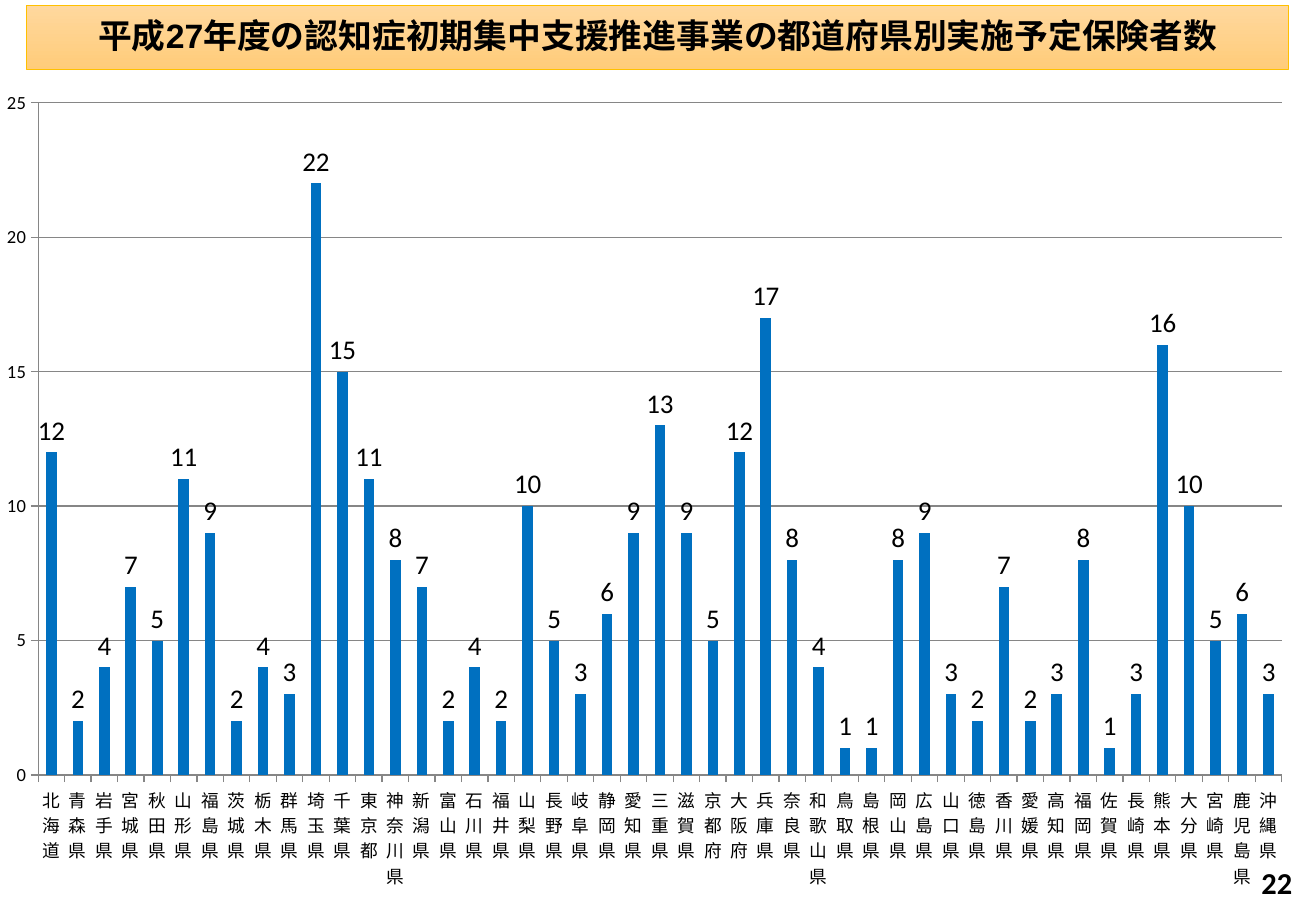
from lxml import etree
from pptx import Presentation
from pptx.chart.data import CategoryChartData
from pptx.dml.color import RGBColor
from pptx.enum.chart import XL_CHART_TYPE as ChartType, XL_LABEL_POSITION as LabelPos, XL_TICK_MARK as Tick
from pptx.enum.shapes import MSO_SHAPE as Shape
from pptx.enum.text import MSO_ANCHOR as Anchor, PP_ALIGN as Align
from pptx.oxml.ns import qn
from pptx.util import Pt

BLACK = RGBColor(0x00, 0x00, 0x00)
BLUE = RGBColor(0x00, 0x70, 0xC0)
GREY = RGBColor(0x86, 0x86, 0x86)
ORANGE_LIGHT = RGBColor(0xFF, 0xD8, 0x9E)
ORANGE_DEEP = RGBColor(0xFF, 0xCC, 0x7A)
GOLD = RGBColor(0xFF, 0xC0, 0x00)

INSURERS = {
    "北海道": 12, "青森県": 2, "岩手県": 4, "宮城県": 7, "秋田県": 5, "山形県": 11,
    "福島県": 9, "茨城県": 2, "栃木県": 4, "群馬県": 3, "埼玉県": 22, "千葉県": 15,
    "東京都": 11, "神奈川県": 8, "新潟県": 7, "富山県": 2, "石川県": 4, "福井県": 2,
    "山梨県": 10, "長野県": 5, "岐阜県": 3, "静岡県": 6, "愛知県": 9, "三重県": 13,
    "滋賀県": 9, "京都府": 5, "大阪府": 12, "兵庫県": 17, "奈良県": 8, "和歌山県": 4,
    "鳥取県": 1, "島根県": 1, "岡山県": 8, "広島県": 9, "山口県": 3, "徳島県": 2,
    "香川県": 7, "愛媛県": 2, "高知県": 3, "福岡県": 8, "佐賀県": 1, "長崎県": 3,
    "熊本県": 16, "大分県": 10, "宮崎県": 5, "鹿児島県": 6, "沖縄県": 3,
}


def set_font(font, name, size, bold=False):
    font.name, font.size, font.bold = name, Pt(size), bold
    font.color.rgb = BLACK


prs = Presentation()
prs.slide_width, prs.slide_height = Pt(780), Pt(540)
slide = prs.slides.add_slide(prs.slide_layouts[6])

# Column chart of insurers by prefecture
data = CategoryChartData()
data.categories = list(INSURERS)
data.add_series("保険者数", list(INSURERS.values()))
chart = slide.shapes.add_chart(
    ChartType.COLUMN_CLUSTERED, Pt(0), Pt(0), Pt(780), Pt(530.6), data).chart
chart.has_title = False
chart.has_legend = False
set_font(chart.font, "Calibri", 18)

columns = chart.plots[0]
columns.gap_width = 150
columns.vary_by_categories = False
columns.series[0].format.fill.solid()
columns.series[0].format.fill.fore_color.rgb = BLUE
columns.has_data_labels = True
values = columns.data_labels
values.show_value = True
values.position = LabelPos.OUTSIDE_END
set_font(values.font, "Calibri", 16)

# Axes and gridlines
prefectures, counts = chart.category_axis, chart.value_axis
for axis, size in ((prefectures, 10.5), (counts, 11)):
    axis.major_tick_mark = Tick.OUTSIDE
    axis.minor_tick_mark = Tick.NONE
    axis.format.line.color.rgb = GREY
    axis.format.line.width = Pt(0.75)
    set_font(axis.tick_labels.font, "Calibri", size)
counts.minimum_scale, counts.maximum_scale, counts.major_unit = 0, 25, 5
counts.has_major_gridlines = True
counts.major_gridlines.format.line.color.rgb = GREY
counts.major_gridlines.format.line.width = Pt(0.75)

# Prefecture names run downwards
name_body = prefectures._element.find(qn("c:txPr")).find(qn("a:bodyPr"))
name_body.set("rot", "0")
name_body.set("vert", "eaVert")

# Fixed plot area
plot_area = chart._chartSpace.chart.plotArea
for old_layout in plot_area.findall(qn("c:layout")):
    plot_area.remove(old_layout)
layout = etree.Element(qn("c:layout"))
manual = etree.SubElement(layout, qn("c:manualLayout"))
for tag, val in (("layoutTarget", "inner"), ("xMode", "edge"), ("yMode", "edge"),
                 ("x", "0.029"), ("y", "0.115"), ("w", "0.945"), ("h", "0.751")):
    etree.SubElement(manual, qn(f"c:{tag}")).set("val", val)
plot_area.insert(0, layout)

# Title banner
banner = slide.shapes.add_shape(Shape.RECTANGLE, Pt(16), Pt(3), Pt(748), Pt(38))
banner.shadow.inherit = False
banner.fill.gradient()
banner.fill.gradient_angle = 270
for stop, colour in zip(banner.fill.gradient_stops, (ORANGE_LIGHT, ORANGE_DEEP)):
    stop.color.rgb = colour
banner.line.color.rgb = GOLD
banner.line.width = Pt(0.5)
banner.text_frame.word_wrap = True
banner.text_frame.vertical_anchor = Anchor.MIDDLE
title = banner.text_frame.paragraphs[0]
title.text = "平成27年度の認知症初期集中支援推進事業の都道府県別実施予定保険者数"
title.alignment = Align.CENTER
title.line_spacing = 0.9
set_font(title.font, "Arial", 20, True)

# Page number
page_box = slide.shapes.add_textbox(Pt(693), Pt(508.5), Pt(80), Pt(29))
page_box.text_frame.word_wrap = True
page = page_box.text_frame.paragraphs[0]
page.text = "22"
page.alignment = Align.RIGHT
set_font(page.font, "Calibri", 18, True)

prs.save("out.pptx")
